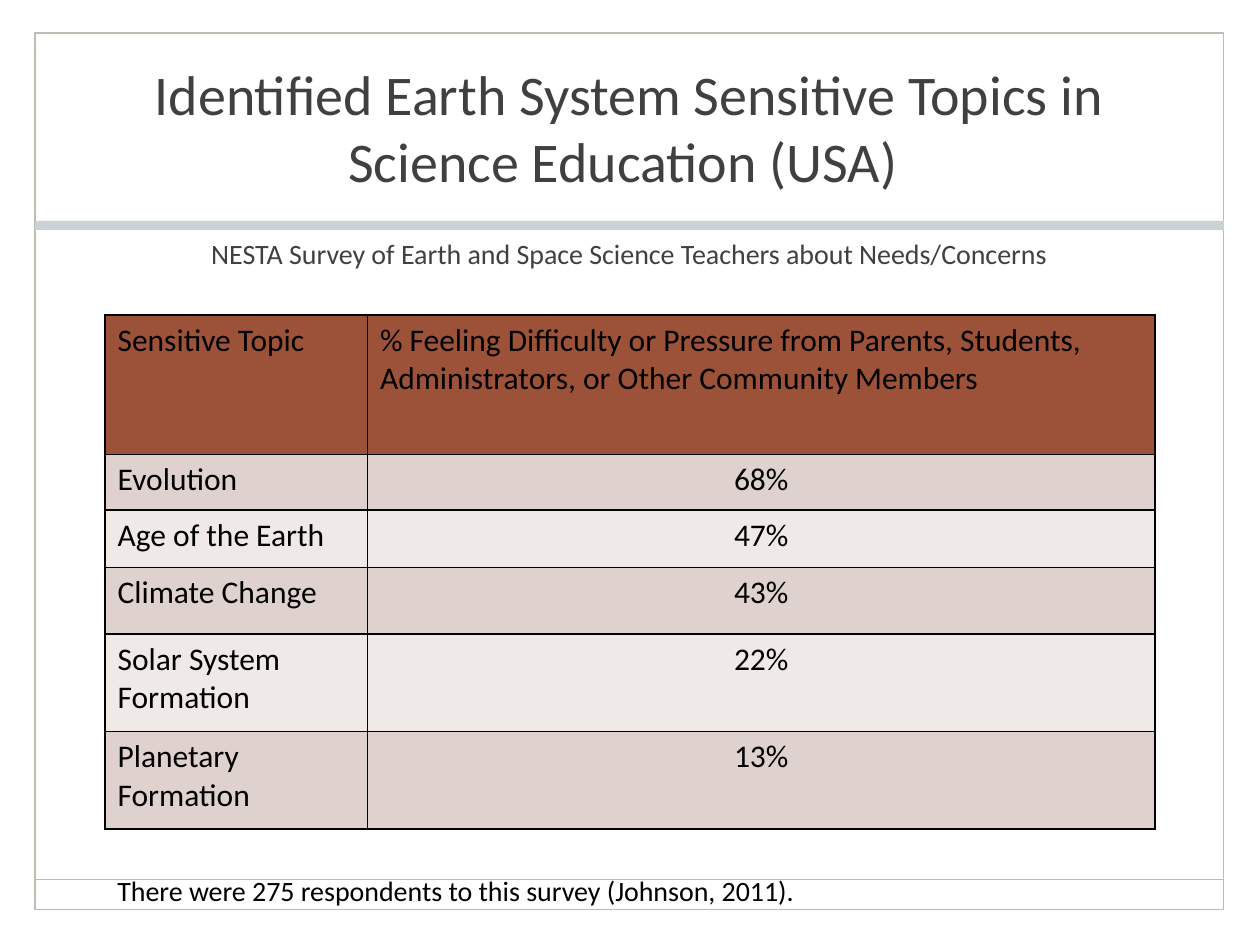
from lxml.etree import SubElement
from pptx import Presentation
from pptx.dml.color import RGBColor
from pptx.enum.shapes import MSO_CONNECTOR, MSO_SHAPE
from pptx.enum.text import MSO_ANCHOR, PP_ALIGN
from pptx.oxml.ns import qn
from pptx.util import Pt

TITLE = "Identified Earth System Sensitive Topics in Science Education (USA) "
SUBTITLE = "NESTA Survey of Earth and Space Science Teachers about Needs/Concerns"
NOTE = "There were 275 respondents to this survey (Johnson, 2011)."
ROWS = [
    ("Sensitive Topic", "% Feeling Difficulty or Pressure from Parents, Students, "
     "Administrators, or Other Community Members"),
    ("Evolution", "68%"),
    ("Age of the Earth", "47%"),
    ("Climate Change", "43%"),
    ("Solar System Formation", "22%"),
    ("Planetary Formation", "13%"),
]
ROW_HEIGHTS = [79.6, 31.8, 32.8, 38.1, 55.8, 55.8]
COL_WIDTHS = [150, 450]
HEADER_FILL, BAND_FILLS = "9C5238", ("DED1CE", "EFE9E8")

FRAME_LEFT, FRAME_TOP, FRAME_WIDTH, FRAME_HEIGHT = 20.2, 18.8, 679, 501
FOOTER_Y = 502.6
TABLE_LEFT, TABLE_TOP = 60, 180


def rgb(value):
    return RGBColor.from_string(value)


def write(tf, text, size, color, align=PP_ALIGN.LEFT):
    p = tf.paragraphs[0]
    p.alignment = align
    r = p.add_run()
    r.text = text
    for name, value in {"name": "Calibri", "size": Pt(size)}.items():
        setattr(r.font, name, value)
    r.font.color.rgb = rgb(color)


def add_text(s, box, text, size, color, align=PP_ALIGN.LEFT, anchor=MSO_ANCHOR.TOP):
    tf = s.shapes.add_textbox(*map(Pt, box)).text_frame
    tf.word_wrap = True
    tf.vertical_anchor = anchor
    write(tf, text, size, color, align)


def add_rect(s, box, line, width, fill=None):
    sp = s.shapes.add_shape(MSO_SHAPE.RECTANGLE, *map(Pt, box))
    sp.shadow.inherit = False
    if fill:
        sp.fill.solid()
        sp.fill.fore_color.rgb = rgb(fill)
    else:
        sp.fill.background()
    sp.line.color.rgb = rgb(line)
    sp.line.width = Pt(width)


def add_borders(cell):
    tc_pr = cell._tc.get_or_add_tcPr()
    for side in ("lnL", "lnR", "lnT", "lnB"):
        ln = SubElement(tc_pr, qn(f"a:{side}"), w=str(Pt(1)))
        SubElement(SubElement(ln, qn("a:solidFill")), qn("a:srgbClr"), val="000000")


def add_topic_table(s):
    box = (TABLE_LEFT, TABLE_TOP, sum(COL_WIDTHS), sum(ROW_HEIGHTS))
    table = s.shapes.add_table(len(ROWS), len(COL_WIDTHS), *map(Pt, box)).table
    for col, width in zip(table.columns, COL_WIDTHS):
        col.width = Pt(width)
    for i, (texts, height) in enumerate(zip(ROWS, ROW_HEIGHTS)):
        table.rows[i].height = Pt(height)
        for j, text in enumerate(texts):
            cell = table.cell(i, j)
            add_borders(cell)
            cell.fill.solid()
            cell.fill.fore_color.rgb = rgb(BAND_FILLS[(i - 1) % 2] if i else HEADER_FILL)
            align = PP_ALIGN.CENTER if i and j else PP_ALIGN.LEFT
            write(cell.text_frame, text, 18, "000000", align)


def main():
    prs = Presentation()
    prs.slide_width, prs.slide_height = Pt(720), Pt(540)
    s = prs.slides.add_slide(prs.slide_layouts[6])

    add_rect(s, (FRAME_LEFT, FRAME_TOP, FRAME_WIDTH, FRAME_HEIGHT), "BEBDB2", 1)
    rule = s.shapes.add_connector(
        MSO_CONNECTOR.STRAIGHT, Pt(FRAME_LEFT), Pt(FOOTER_Y),
        Pt(FRAME_LEFT + FRAME_WIDTH), Pt(FOOTER_Y))
    rule.line.color.rgb = rgb("BEBDB2")
    rule.line.width = Pt(1)
    SubElement(rule._element.spPr, qn("a:effectLst"))
    add_rect(s, (FRAME_LEFT, 126.2, FRAME_WIDTH, 5), "D1D0C8", 0.25, "CBD2D5")

    add_text(s, (70.6, 19.4, 578, 106), TITLE, 32, "404040",
             PP_ALIGN.CENTER, MSO_ANCHOR.MIDDLE)
    add_text(s, (70.6, 131.8, 578, 30), SUBTITLE, 16, "404040", PP_ALIGN.CENTER)
    add_topic_table(s)
    add_text(s, (TABLE_LEFT, 495.4, 573, 26.6), NOTE, 16, "000000")
    prs.save("out.pptx")


if __name__ == "__main__":
    main()
